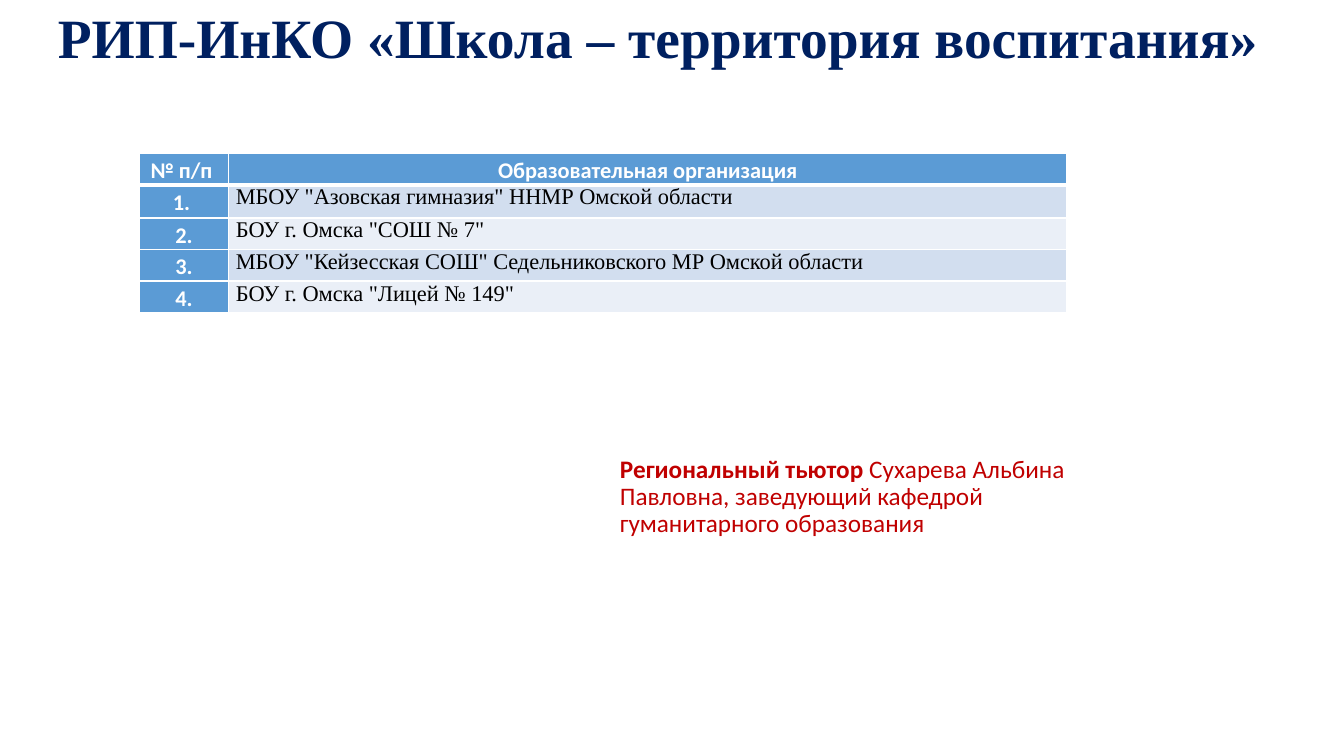
from lxml.etree import SubElement
from pptx import Presentation
from pptx.dml.color import RGBColor
from pptx.enum.text import MSO_ANCHOR as Anchor, PP_ALIGN as Align
from pptx.oxml.ns import qn
from pptx.util import Inches, Pt

WHITE, BLUE, NAVY, RED, BLACK = "FFFFFF", "5B9BD5", "002060", "C00000", "000000"
BANDS = ("D2DEEF", "EAEFF7")
COLUMN_WIDTHS = (0.89, 8.31)
ROW_HEIGHTS = (0.29, 0.33, 0.26, 0.29, 0.29)
ROWS = (
    ("№ п/п ", "Образовательная организация"),
    ("1. ", 'МБОУ "Азовская гимназия" ННМР Омской области'),
    ("2.", 'БОУ г. Омска "СОШ № 7"'),
    ("3.", 'МБОУ "Кейзесская СОШ" Седельниковского МР Омской области'),
    ("4.", 'БОУ г. Омска "Лицей № 149"'),
)
HEADING = {"name": "Calibri", "size": Pt(16), "bold": True}
BODY = {"name": "Times New Roman", "size": Pt(16), "bold": False}
TITLE = {"name": "Times New Roman", "size": Pt(39.6), "bold": True}
TUTOR = {"name": "Calibri", "size": Pt(18), "bold": False}


def rgb(color):
    """Return the colour for a hex string."""
    return RGBColor.from_string(color)


def set_attributes(target, values):
    """Set every attribute named in a dict."""
    for name, value in values.items():
        setattr(target, name, value)


def add_run(paragraph, text, font, color):
    """Add a formatted run to a paragraph."""
    run = paragraph.add_run()
    run.text = text
    set_attributes(run.font, font)
    run.font.color.rgb = rgb(color)


def add_text(slide, place, runs, color, frame_format, paragraph_format):
    """Add a wrapped text box with one paragraph."""
    box = slide.shapes.add_textbox(*map(Inches, place))
    set_attributes(box.text_frame, {"word_wrap": True, **frame_format})
    paragraph = box.text_frame.paragraphs[0]
    set_attributes(paragraph, {"line_spacing": 0.9, **paragraph_format})
    for text, font in runs:
        add_run(paragraph, text, font, color)


def set_borders(cell, widths):
    """Draw white cell borders with widths in points."""
    properties = cell._tc.get_or_add_tcPr()
    for position, (side, width) in enumerate(widths.items()):
        line = properties.makeelement(qn(f"a:ln{side}"), {"w": str(Pt(width))})
        fill = SubElement(line, qn("a:solidFill"))
        SubElement(fill, qn("a:srgbClr"), val=WHITE)
        properties.insert(position, line)


def fill_cell(cell, text, row, column):
    """Write and format one table cell."""
    heading = row == 0 or column == 0
    set_attributes(cell, {
        "margin_left": Inches(0.07), "margin_right": Inches(0.07),
        "margin_top": 0, "margin_bottom": 0,
    })
    cell.fill.solid()
    cell.fill.fore_color.rgb = rgb(BLUE if heading else BANDS[(row - 1) % 2])
    set_borders(cell, {"L": 1, "R": 1, "T": 3 if row == 1 else 1, "B": 3 if row == 0 else 1})
    paragraph = cell.text_frame.paragraphs[0]
    if heading:
        set_attributes(paragraph, {"alignment": Align.CENTER, "line_spacing": 1.15})
    add_run(paragraph, text, HEADING if heading else BODY, WHITE if heading else BLACK)


def add_schools(slide):
    """Add the table of schools."""
    place = (1.38, 1.52, sum(COLUMN_WIDTHS), sum(ROW_HEIGHTS))
    table = slide.shapes.add_table(len(ROWS), len(COLUMN_WIDTHS), *map(Inches, place)).table
    for column, width in zip(table.columns, COLUMN_WIDTHS):
        column.width = Inches(width)
    for row, height in zip(table.rows, ROW_HEIGHTS):
        row.height = Inches(height)
    for row, texts in enumerate(ROWS):
        for column, text in enumerate(texts):
            fill_cell(table.cell(row, column), text, row, column)


def main():
    """Build the slide and save it."""
    presentation = Presentation()
    presentation.slide_width, presentation.slide_height = Inches(13.33), Inches(7.5)
    slide = presentation.slides.add_slide(presentation.slide_layouts[6])
    add_schools(slide)
    tutor_runs = (
        ("Региональный тьютор ", {**TUTOR, "bold": True}),
        ("Сухарева Альбина Павловна, заведующий кафедрой гуманитарного образования", TUTOR),
    )
    add_text(slide, (6.05, 4.48, 5.29, 0.49), tutor_runs, RED, {}, {})
    title_runs = (("РИП-ИнКО «Школа – территория воспитания»", TITLE),)
    add_text(slide, (0.28, 0, 12.49, 0.81), title_runs, NAVY,
             {"vertical_anchor": Anchor.MIDDLE}, {"alignment": Align.CENTER})
    presentation.save("out.pptx")


if __name__ == "__main__":
    main()
